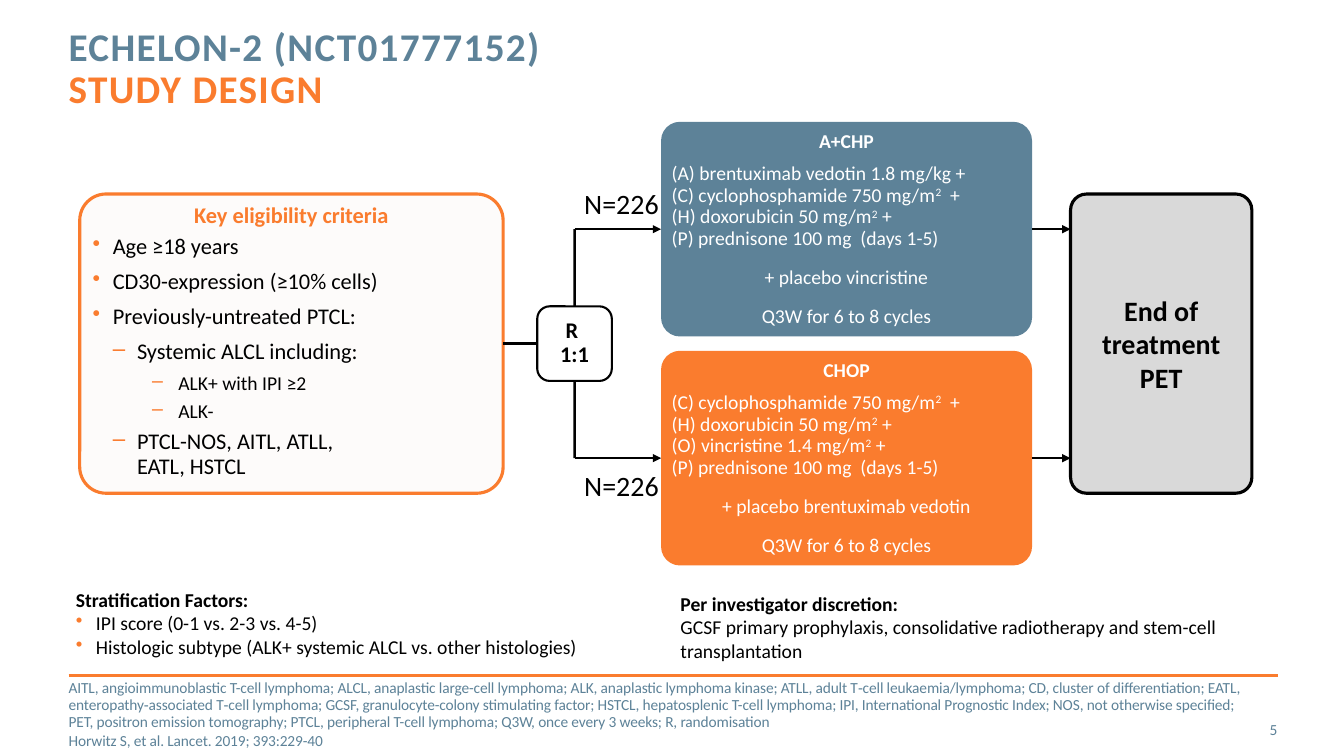
from collections import namedtuple
from copy import deepcopy

from lxml import etree
from pptx import Presentation
from pptx.dml.color import RGBColor
from pptx.enum.shapes import MSO_CONNECTOR, MSO_SHAPE
from pptx.enum.text import MSO_ANCHOR, PP_ALIGN
from pptx.oxml.ns import qn
from pptx.util import Cm, Pt

STRAIGHT = MSO_CONNECTOR.STRAIGHT
ROUNDED = MSO_SHAPE.ROUNDED_RECTANGLE
TOP, MIDDLE = MSO_ANCHOR.TOP, MSO_ANCHOR.MIDDLE
LEFT, CENTER, RIGHT = PP_ALIGN.LEFT, PP_ALIGN.CENTER, PP_ALIGN.RIGHT
SIDE_TOP, SIDE_LEFT, SIDE_BOTTOM, SIDE_RIGHT = range(4)

FONT = "Calibri"
BLUE, ORANGE, BLACK, WHITE = "5D8298", "FA7C2E", "000000", "FFFFFF"
CREAM, GREY = "FDFBFA", "D9D9D9"
INSET = 0.13
CORNER = 0.088

Box = namedtuple("Box", "left top width height")  # centimetres


def color(hex_string):
    return RGBColor.from_string(hex_string)


def lengths(box):
    return [Cm(value) for value in box]


def add_span(para, text, size, ink, bold=False, tracking=0, raised=False):
    """Add one formatted run per line of text, with line breaks between."""
    for number, line in enumerate(text.split("\n")):
        span = para.add_run()
        span.text = line
        font = span.font
        font.name, font.size, font.bold = FONT, Pt(size), bold
        font.color.rgb = color(ink)
        properties = span._r.get_or_add_rPr()
        if tracking:
            properties.set("spc", str(round(tracking * 100)))
        if raised:
            properties.set("baseline", "30000")
        if number:
            line_break = etree.Element(qn("a:br"))
            line_break.append(deepcopy(properties))
            span._r.addprevious(line_break)


def add_bullet(para, symbol, indent, hanging):
    properties = para._p.get_or_add_pPr()
    properties.set("marL", str(Cm(indent)))
    properties.set("indent", str(-Cm(hanging)))
    tint = etree.SubElement(properties, qn("a:buClr"))
    etree.SubElement(tint, qn("a:srgbClr")).set("val", ORANGE)
    etree.SubElement(properties, qn("a:buChar")).set("char", symbol)


def add_para(frame, text="", size=14, ink=BLACK, bold=False, align=LEFT,
             spacing=None, after=0, bullet=None, tracking=0):
    """Add a paragraph; text between ^ marks is superscript."""
    para = frame.paragraphs[0] if not frame.text else frame.add_paragraph()
    if bullet:
        add_bullet(para, *bullet)
    para.alignment = align
    para.space_after = Pt(after)
    if spacing:
        para.line_spacing = spacing
    if text:
        for number, part in enumerate(text.split("^")):
            add_span(para, part, size, ink, bold, tracking, number % 2 == 1)
    return para


def set_frame(shape, anchor, inset):
    frame = shape.text_frame
    frame.word_wrap = True
    frame.vertical_anchor = anchor
    frame.margin_left = frame.margin_right = Cm(inset)
    frame.margin_top = frame.margin_bottom = Cm(inset)
    return frame


def add_text(slide, box, anchor=TOP, inset=0):
    return set_frame(slide.shapes.add_textbox(*lengths(box)), anchor, inset)


def add_panel(slide, box, fill, outline=None, width=2.25, corner=CORNER, inset=INSET):
    panel = slide.shapes.add_shape(ROUNDED, *lengths(box))
    panel.shadow.inherit = False
    panel.adjustments[0] = corner
    panel.fill.solid()
    panel.fill.fore_color.rgb = color(fill)
    if outline:
        panel.line.color.rgb = color(outline)
        panel.line.width = Pt(width)
    else:
        panel.line.fill.background()
    set_frame(panel, MIDDLE, inset)
    return panel


def add_line(slide, start, end, ink=BLACK, width=1.75, arrow=False):
    line = slide.shapes.add_connector(STRAIGHT, *lengths(start + end))
    line.line.color.rgb = color(ink)
    line.line.width = Pt(width)
    if arrow:
        etree.SubElement(line.line._get_or_add_ln(), qn("a:tailEnd")).set("type", "triangle")
    etree.SubElement(line._element.spPr, qn("a:effectLst"))
    return line


def add_title(slide, box):
    para = add_para(add_text(slide, box), spacing=Pt(30))
    add_span(para, "ECHELON-2 (NCT01777152)", 28, BLUE, True, 1)
    add_span(para, "\nSTUDY DESIGN", 28, ORANGE, True, 1)


def add_eligibility(slide, box):
    panel = add_panel(slide, box, CREAM, ORANGE)
    frame = panel.text_frame
    add_para(frame, "Key eligibility criteria", 16, ORANGE, True, CENTER, Pt(14), 5)
    levels = [(16, 7.2, ("•", 0.51, 0.51)),
              (16, 5.9, ("–", 1.12, 0.61)),
              (14, 4.4, ("–", 2.16, 0.66))]
    criteria = [(0, "Age ≥18 years"),
                (0, "CD30-expression (≥10% cells)"),
                (0, "Previously-untreated PTCL:"),
                (1, "Systemic ALCL including:"),
                (2, "ALK+ with IPI ≥2"),
                (2, "ALK-"),
                (1, "PTCL-NOS, AITL, ATLL,\nEATL, HSTCL")]
    for level, text in criteria:
        size, after, bullet = levels[level]
        para = add_para(frame, text, size, spacing=0.93, after=after, bullet=bullet)
        para.level = level
    return panel


def add_randomisation(slide, box):
    panel = add_panel(slide, box, WHITE, BLACK, 1.5, 0.167, 0)
    add_para(panel.text_frame, "R \n1:1", 16, bold=True, align=CENTER, spacing=0.9)
    return panel


def add_arm(slide, box, fill, name, doses, placebo):
    panel = add_panel(slide, box, fill)
    frame = panel.text_frame
    add_para(frame, name, 14, WHITE, True, CENTER, 0.93, 7.2)
    for dose in doses:
        after = 12 if dose == doses[-1] else 0
        add_para(frame, dose, 14, WHITE, spacing=0.93, after=after)
    add_para(frame, placebo, 14, WHITE, False, CENTER, 0.93, 12)
    add_para(frame, "Q3W for 6 to 8 cycles", 14, WHITE, False, CENTER, 0.93, 7.2)
    return panel


def add_flow(slide, box):
    """Place eligibility, randomisation, both arms and the PET panel."""
    middle = box.top + box.height / 2
    side_height, arm_height, split_size = 7.54, 5.41, 1.88
    side_top = middle - side_height / 2
    eligible_box = Box(box.left, side_top, 10.67, side_height)
    split_box = Box(box.left + 11.53, middle - split_size / 2, split_size, split_size)
    split_x = split_box.left + split_size / 2
    arm_left, arm_width = box.left + 14.65, 9.35
    pet_box = Box(box.left + box.width - 4.57, side_top, 4.57, side_height)

    eligible = add_eligibility(slide, eligible_box)
    split = add_randomisation(slide, split_box)
    entry = add_line(slide, (eligible_box.left + eligible_box.width, middle),
                     (split_box.left, middle))
    entry.begin_connect(eligible, SIDE_RIGHT)
    entry.end_connect(split, SIDE_LEFT)

    pet = add_panel(slide, pet_box, GREY, BLACK)
    add_para(pet.text_frame, "End of treatment\nPET", 20, bold=True, align=CENTER, after=5)

    cyclophosphamide = "(C) cyclophosphamide 750 mg/m^2^  +"
    doxorubicin = "(H) doxorubicin 50 mg/m^2^ +"
    prednisone = "(P) prednisone 100 mg  (days 1-5)"
    arms = [
        (box.top, SIDE_TOP, -1.2, BLUE, "A+CHP",
         ["(A) brentuximab vedotin 1.8 mg/kg +", cyclophosphamide, doxorubicin, prednisone],
         "+ placebo vincristine"),
        (box.top + box.height - arm_height, SIDE_BOTTOM, 0.14, ORANGE, "CHOP",
         [cyclophosphamide, doxorubicin, "(O) vincristine 1.4 mg/m^2^ +", prednisone],
         "+ placebo brentuximab vedotin"),
    ]
    for top, side, label_shift, *content in arms:
        arm = add_arm(slide, Box(arm_left, top, arm_width, arm_height), *content)
        arm_y = top + arm_height / 2
        branch = add_line(slide, (split_x, middle), (split_x, arm_y))
        branch.begin_connect(split, side)
        inward = add_line(slide, (split_x, arm_y), (arm_left, arm_y), arrow=True)
        inward.end_connect(arm, SIDE_LEFT)
        outward = add_line(slide, (arm_left + arm_width, arm_y), (pet_box.left, arm_y), arrow=True)
        outward.begin_connect(arm, SIDE_RIGHT)
        label_box = Box(split_x - 0.25, arm_y + label_shift, 2.87, 1.12)
        add_para(add_text(slide, label_box, inset=INSET), "N=226", 20).alignment = CENTER


def add_notes_row(slide, box):
    """Place stratification factors at left and investigator options at right."""
    factors = add_text(slide, Box(box.left, box.top, 14.2, box.height), inset=INSET)
    add_para(factors, "Stratification Factors:", bold=True)
    for text in ("IPI score (0-1 vs. 2-3 vs. 4-5)",
                 "Histologic subtype (ALK+ systemic ALCL vs. other histologies)"):
        add_para(factors, text, bullet=("•", 0.51, 0.51))
    options_box = Box(box.left + 15.24, box.top + 0.1, box.width - 15.24, box.height)
    options = add_text(slide, options_box, inset=INSET)
    add_para(options, "Per investigator discretion:", bold=True)
    add_para(options, "GCSF primary prophylaxis, consolidative radiotherapy and stem-cell transplantation")


def add_footer(slide, box):
    add_line(slide, (box.left, box.top), (box.left + box.width, box.top), ORANGE, 2)
    frame = add_text(slide, Box(box.left, box.top + 0.13, 29.54, box.height - 0.13))
    for text in (
            "AITL, angioimmunoblastic T-cell lymphoma; ALCL, anaplastic large-cell lymphoma; ALK, anaplastic lymphoma kinase; ATLL, adult T‑cell leukaemia/lymphoma; CD, cluster of differentiation; EATL, enteropathy‑associated T‑cell lymphoma; GCSF, granulocyte-colony stimulating factor; HSTCL, hepatosplenic T-cell lymphoma; IPI, International Prognostic Index; NOS, not otherwise specified; PET, positron emission tomography; PTCL, peripheral T-cell lymphoma; Q3W, once every 3 weeks; R, randomisation",
            "Horwitz S, et al. Lancet. 2019; 393:229-40"):
        add_para(frame, text, 11, BLUE, spacing=0.9, after=2, tracking=-0.1)
    number_box = Box(box.left + box.width - 2.2, box.top + 0.84, 2.18, 1.02)
    add_para(add_text(slide, number_box, MIDDLE), "5", 11, BLUE, align=RIGHT)


def main():
    deck = Presentation()
    deck.slide_width, deck.slide_height = Cm(33.87), Cm(19.05)
    page = deck.slides.add_slide(deck.slide_layouts[6])
    add_title(page, Box(1.73, 0.69, 24.28, 2.24))
    add_flow(page, Box(2.01, 3.07, 29.54, 11.18))
    add_notes_row(page, Box(1.78, 14.68, 29.8, 2.06))
    add_footer(page, Box(1.73, 17.02, 30.48, 1.95))
    deck.save("out.pptx")


if __name__ == "__main__":
    main()
